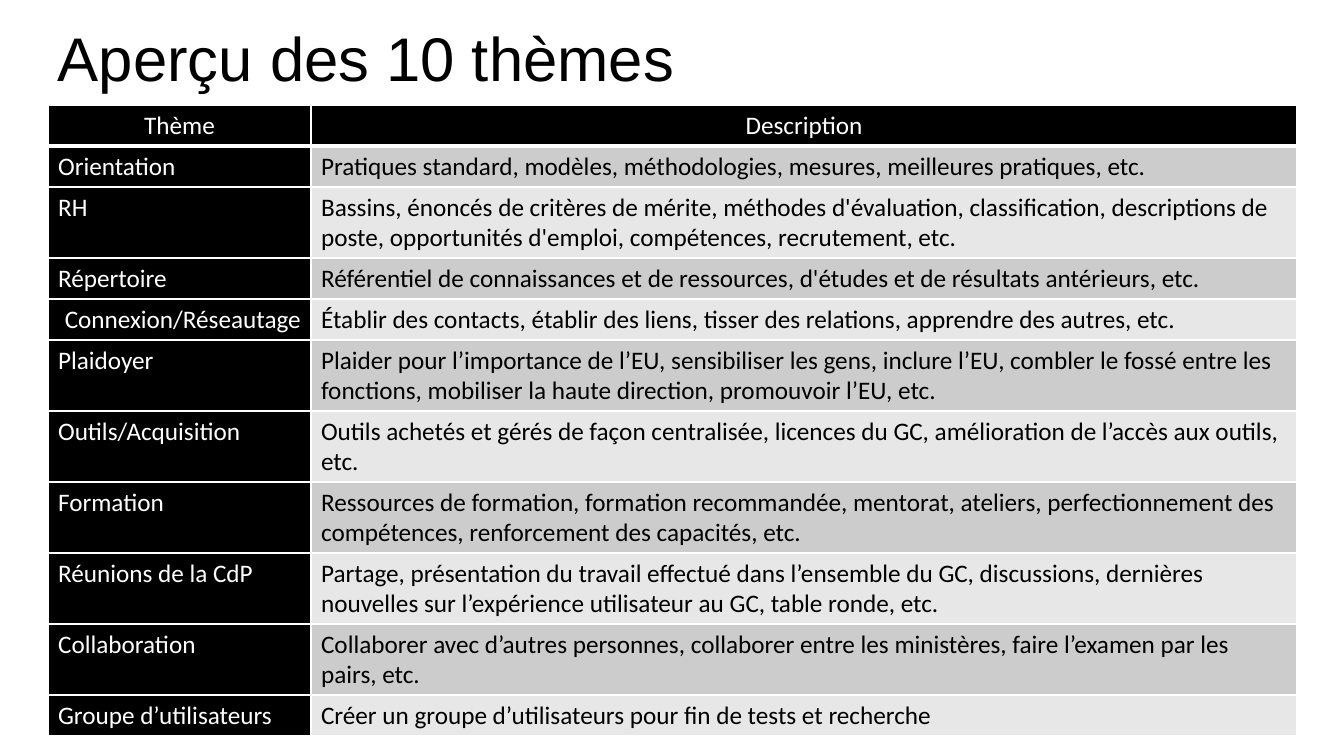
from lxml.etree import SubElement as Sub
from pptx import Presentation
from pptx.dml.color import RGBColor as Rgb
from pptx.enum.text import MSO_ANCHOR as Anchor, PP_ALIGN as Align
from pptx.oxml.ns import qn
from pptx.util import Pt

# Content
TITLE = "Aperçu des 10 thèmes"
HEAD = ("Thème", "Description")
THEMES = [
    ("Orientation", "Pratiques standard, modèles, méthodologies, mesures, meilleures pratiques, etc."),
    ("RH", "Bassins, énoncés de critères de mérite, méthodes d'évaluation, classification, "
           "descriptions de poste, opportunités d'emploi, compétences, recrutement, etc."),
    ("Répertoire", "Référentiel de connaissances et de ressources, d'études et de résultats antérieurs, etc."),
    ("Connexion/Réseautage", "Établir des contacts, établir des liens, tisser des relations, "
                             "apprendre des autres, etc."),
    ("Plaidoyer", "Plaider pour l’importance de l’EU, sensibiliser les gens, inclure l’EU, combler le fossé "
                  "entre les fonctions, mobiliser la haute direction, promouvoir l’EU, etc."),
    ("Outils/Acquisition", "Outils achetés et gérés de façon centralisée, licences du GC, "
                           "amélioration de l’accès aux outils, etc."),
    ("Formation", "Ressources de formation, formation recommandée, mentorat, ateliers, "
                  "perfectionnement des compétences, renforcement des capacités, etc."),
    ("Réunions de la CdP", "Partage, présentation du travail effectué dans l’ensemble du GC, discussions, "
                           "dernières nouvelles sur l’expérience utilisateur au GC, table ronde, etc."),
    ("Collaboration", "Collaborer avec d’autres personnes, collaborer entre les ministères, "
                      "faire l’examen par les pairs, etc."),
    ("Groupe d’utilisateurs", "Créer un groupe d’utilisateurs pour fin de tests et recherche"),
]
RIGHT = "Connexion/Réseautage"
COLORS = {"black": "000000", "white": "FFFFFF", "dark": "CCCCCC", "light": "E7E7E7"}

# Layout in px
WIDTH, HEIGHT = 1344, 756
LEFT, TOP = 48, 105
COLS = (263, 986)
ONE, TWO = 41, 71  # heights of rows with one and two lines
FULL = 90  # a longer description takes two lines


def px(n):
    return round(n * 914400 / 100.8)


def color(name):
    return Rgb.from_string(COLORS[name])


def style(par, face, size, ink, align=Align.LEFT):
    par.alignment = align
    font = par.runs[0].font
    font.name, font.size = face, Pt(size)
    font.color.rgb = color(ink)


def border(cell, row):
    props = cell._tc.get_or_add_tcPr()
    thick = {"lnT": row == 1, "lnB": row == 0}
    for side in ("lnL", "lnR", "lnT", "lnB"):
        line = Sub(props, qn("a:" + side), w=str(Pt(3 if thick.get(side) else 1)))
        fill = Sub(line, qn("a:solidFill"))
        Sub(fill, qn("a:srgbClr"), val=COLORS["white"])


def add_title(slide):
    box = slide.shapes.add_textbox(px(LEFT), px(11), px(1116), px(102))
    frame = box.text_frame
    frame.word_wrap = True
    frame.vertical_anchor = Anchor.MIDDLE
    frame.text = TITLE
    par = frame.paragraphs[0]
    par.line_spacing = 0.9
    style(par, "Arial", 44, "black")


def add_themes(slide):
    rows = [HEAD, *THEMES]
    tall = [TWO if len(text) > FULL else ONE for _, text in rows]
    table = slide.shapes.add_table(len(rows), len(COLS), px(LEFT), px(TOP),
                                   px(sum(COLS)), px(sum(tall))).table
    table.horz_banding = False
    for col, wide in zip(table.columns, COLS):
        col.width = px(wide)
    for r, texts in enumerate(rows):
        table.rows[r].height = px(tall[r])
        for c, text in enumerate(texts):
            cell = table.cell(r, c)
            solid = r == 0 or c == 0
            back = "black" if solid else "dark" if r % 2 else "light"
            align = Align.CENTER if r == 0 else Align.RIGHT if text == RIGHT else Align.LEFT
            border(cell, r)
            cell.fill.solid()
            cell.fill.fore_color.rgb = color(back)
            cell.text_frame.text = text
            par = cell.text_frame.paragraphs[0]
            style(par, "Calibri", 18, "white" if solid else "black", align)
            par.runs[0].font.bold = False


def main():
    deck = Presentation()
    deck.slide_width, deck.slide_height = px(WIDTH), px(HEIGHT)
    slide = deck.slides.add_slide(deck.slide_layouts[6])
    add_title(slide)
    add_themes(slide)
    deck.save("out.pptx")


if __name__ == "__main__":
    main()
